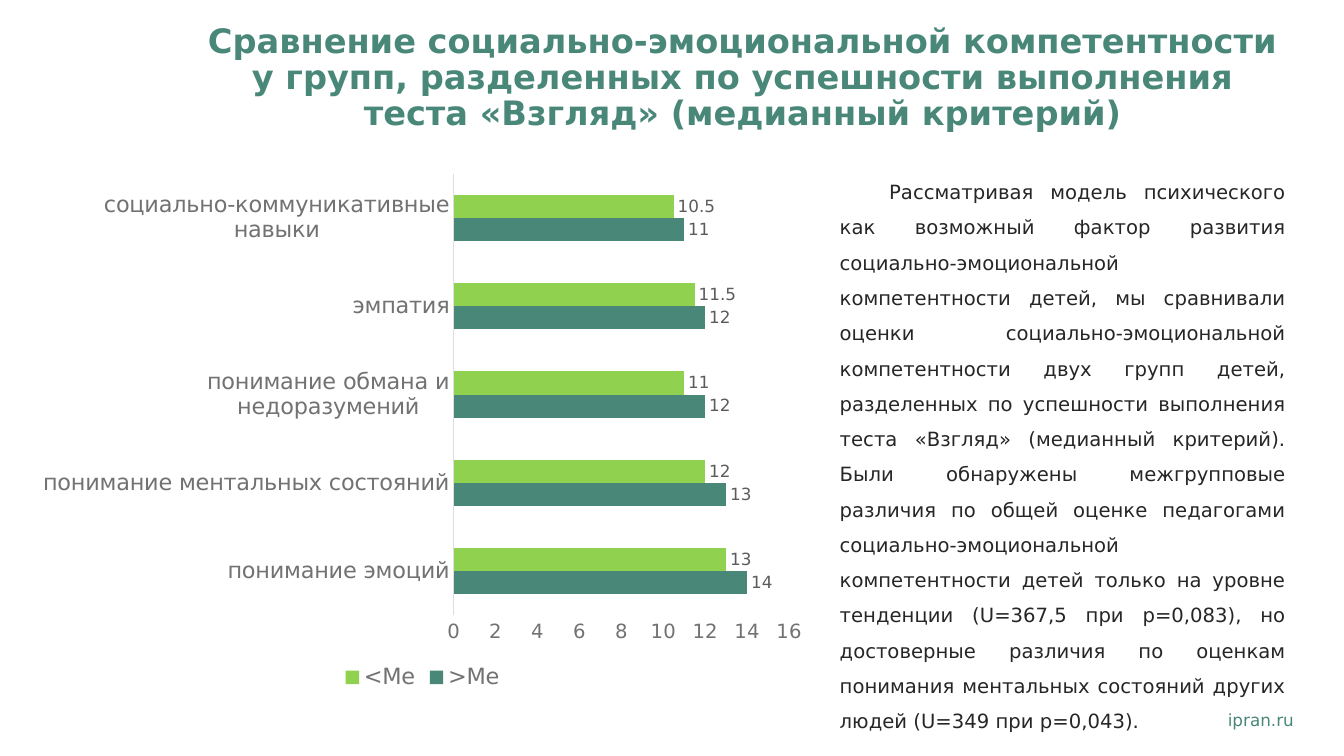
"""Build a slide comparing social-emotional competence in two groups of children."""
from pptx import Presentation
from pptx.chart.data import CategoryChartData
from pptx.dml.color import RGBColor
from pptx.enum.chart import XL_CHART_TYPE, XL_LABEL_POSITION, XL_LEGEND_POSITION, XL_TICK_MARK
from pptx.enum.text import PP_ALIGN
from pptx.util import Inches, Pt

CLUSTERED = XL_CHART_TYPE.BAR_CLUSTERED
OUTSIDE = XL_LABEL_POSITION.OUTSIDE_END
BOTTOM = XL_LEGEND_POSITION.BOTTOM
NO_TICK = XL_TICK_MARK.NONE
CENTER, JUSTIFY, LEFT = PP_ALIGN.CENTER, PP_ALIGN.JUSTIFY, PP_ALIGN.LEFT

FONT = "DejaVu Sans"
COLORS = {
    "teal": "498779",
    "lime": "91D150",
    "text": "262626",
    "axis": "727272",
    "label": "5C5C5C",
    "line": "DEDEDE",
}


def style_font(font, size, color, bold=False):
    font.name = FONT
    font.size = Pt(size)
    font.bold = bold
    font.color.rgb = RGBColor.from_string(COLORS[color])


def add_text(text, *, left, top, width, height, size, color, bold=False,
             align=LEFT, line_spacing=1.0, space_after=0, indent=0):
    box = page.shapes.add_textbox(Inches(left), Inches(top), Inches(width), Inches(height))
    box.text_frame.word_wrap = True
    para = box.text_frame.paragraphs[0]
    para.alignment = align
    para.line_spacing = line_spacing
    para.space_after = Pt(space_after)
    if indent:
        properties = para._p.get_or_add_pPr()
        properties.set("marL", "0")
        properties.set("indent", str(Inches(indent)))
    span = para.add_run()
    span.text = text
    style_font(span.font, size, color, bold)


deck = Presentation()
deck.slide_width = Inches(13.33)
deck.slide_height = Inches(7.5)
page = deck.slides.add_slide(deck.slide_layouts[6])

add_text("ipran.ru", left=12.08, top=6.99, width=1.04, height=0.3, size=12, color="teal")
add_text(
    "Сравнение социально-эмоциональной компетентности у групп, разделенных "
    "по успешности выполнения теста «Взгляд» (медианный критерий)",
    left=1.88, top=0.19, width=10.97, height=1.07, size=24, color="teal",
    bold=True, align=CENTER, line_spacing=0.9,
)

scores = CategoryChartData()
scores.categories = [
    "понимание эмоций",
    "понимание ментальных состояний",
    "понимание обмана и недоразумений",
    "эмпатия",
    "социально-коммуникативные навыки",
]
scores.add_series(">Me", [14, 13, 12, 12, 11])
scores.add_series("<Ме", [13, 12, 11, 11.5, 10.5])
chart = page.shapes.add_chart(
    CLUSTERED, Inches(0.27), Inches(1.62), Inches(7.84), Inches(5.27), scores
).chart
style_font(chart.font, 10, "text")
chart.has_title = False
chart.has_legend = True
chart.legend.position = BOTTOM
chart.legend.include_in_layout = False
style_font(chart.legend.font, 16, "axis")

for axis, size in ((chart.category_axis, 16), (chart.value_axis, 14)):
    axis.major_tick_mark = NO_TICK
    axis.minor_tick_mark = NO_TICK
    axis.has_major_gridlines = False
    style_font(axis.tick_labels.font, size, "axis")
chart.category_axis.format.line.width = Pt(0.75)
chart.category_axis.format.line.color.rgb = RGBColor.from_string(COLORS["line"])
chart.value_axis.format.line.fill.background()
chart.value_axis.minimum_scale = 0
chart.value_axis.maximum_scale = 16
chart.value_axis.major_unit = 2

plot = chart.plots[0]
plot.gap_width = 182
plot.overlap = 0
plot.vary_by_categories = False
for series, color in zip(plot.series, ("teal", "lime")):
    series.format.fill.solid()
    series.format.fill.fore_color.rgb = RGBColor.from_string(COLORS[color])
    labels = series.data_labels
    labels.show_value = True
    labels.position = OUTSIDE
    style_font(labels.font, 12, "label")

add_text(
    "Рассматривая модель психического как возможный фактор развития "
    "социально-эмоциональной компетентности детей, мы сравнивали оценки "
    "социально-эмоциональной компетентности двух групп детей, разделенных "
    "по успешности выполнения теста «Взгляд» (медианный критерий). Были "
    "обнаружены межгрупповые различия по общей оценке педагогами "
    "социально-эмоциональной компетентности детей только на уровне тенденции "
    "(U=367,5 при р=0,083), но достоверные различия по оценкам понимания "
    "ментальных состояний других людей (U=349 при р=0,043).",
    left=8.23, top=1.62, width=4.62, height=5.35, size=14, color="text",
    align=JUSTIFY, line_spacing=1.5, space_after=8, indent=0.49,
)

deck.save("out.pptx")
